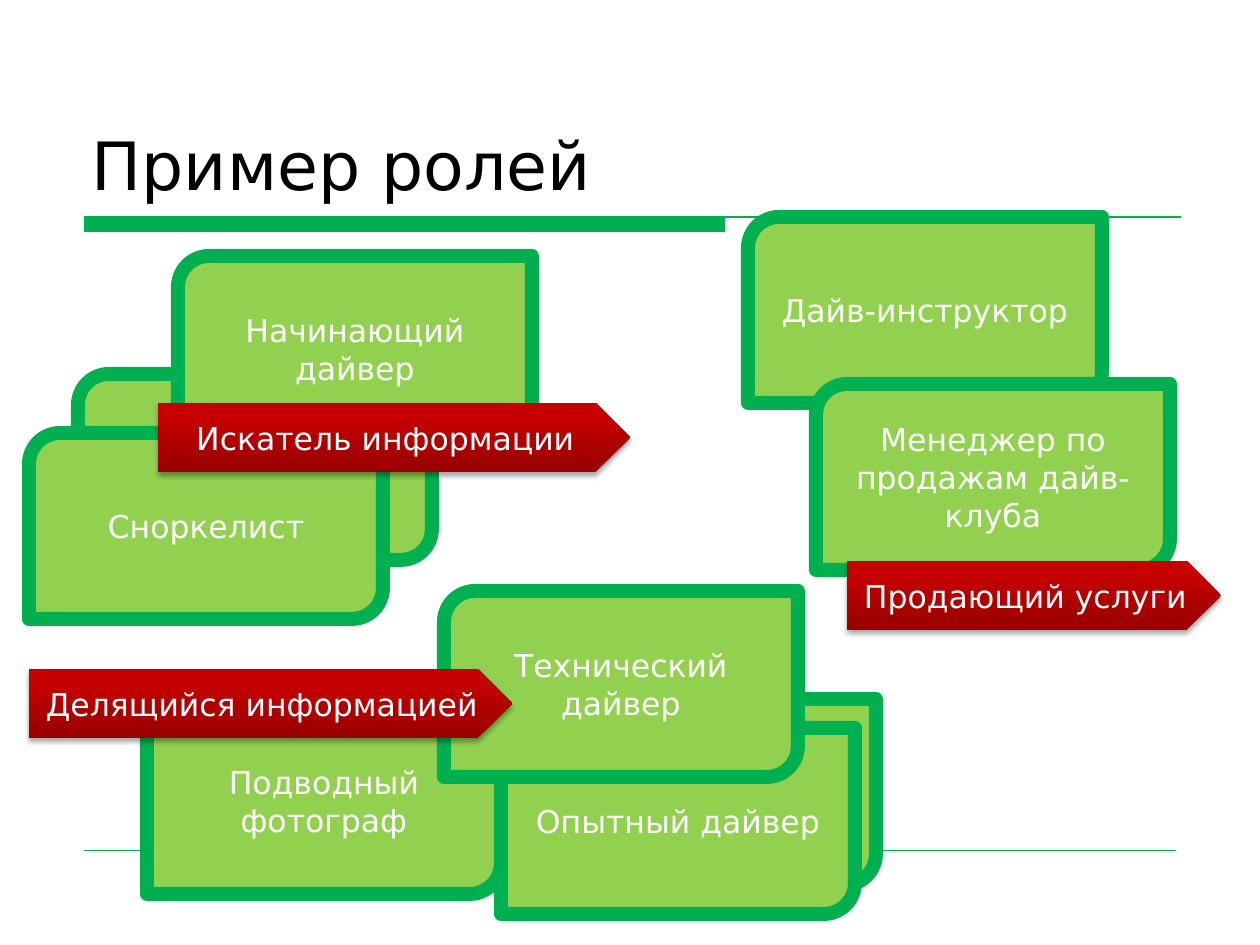
from dataclasses import dataclass

from lxml.etree import SubElement
from pptx import Presentation
from pptx.dml.color import RGBColor
from pptx.enum.shapes import MSO_CONNECTOR, MSO_SHAPE
from pptx.enum.text import MSO_ANCHOR, MSO_AUTO_SIZE, PP_ALIGN
from pptx.oxml import parse_xml
from pptx.oxml.ns import nsdecls, qn
from pptx.util import Emu, Pt

PX_PER_INCH = 126
CARD_SIZE = (354, 186)
ARROW_HEIGHT = 69


@dataclass(frozen=True)
class Theme:
    font: str = "DejaVu Sans"
    title_size: int = 38
    label_size: int = 18
    ink: str = "000000"
    white: str = "FFFFFF"
    green: str = "00B050"
    lime: str = "92D050"
    card_line: int = 8
    reds: tuple = ((0, "980000"), (80, "C60000"), (100, "C70000"))


THEME = Theme()

# Back to front: left, top, label
CARDS = [
    (78, 374, ""),
    (522, 699, ""),
    (29, 433, "Сноркелист"),
    (748, 217, "Дайв-инструктор"),
    (501, 728, "Опытный дайвер"),
    (147, 708, "Подводный фотограф"),
    (444, 591, "Технический дайвер"),
    (178, 256, "Начинающий дайвер"),
    (816, 384, "Менеджер по продажам дайв-клуба"),
]
# Left, top, width, label
ARROWS = [
    (158, 403, 472, "Искатель информации"),
    (29, 669, 483, "Делящийся информацией"),
    (847, 561, 374, "Продающий услуги"),
]


def px(*lengths):
    return [Emu(round(length * 914400 / PX_PER_INCH)) for length in lengths]


def rgb(color):
    return RGBColor.from_string(color)


def write(shape, text, size=THEME.label_size, color=THEME.white,
          align=PP_ALIGN.CENTER, anchor=MSO_ANCHOR.MIDDLE):
    frame = shape.text_frame
    frame.word_wrap = True
    frame.auto_size = MSO_AUTO_SIZE.NONE
    frame.vertical_anchor = anchor
    para = frame.paragraphs[0]
    para.alignment = align
    span = para.add_run()
    span.text = text
    span.font.name = THEME.font
    span.font.size = Pt(size)
    span.font.color.rgb = rgb(color)


def add_shape(page, kind, box, fill):
    shape = page.shapes.add_shape(kind, *px(*box))
    shape.shadow.inherit = False
    shape.fill.solid()
    shape.fill.fore_color.rgb = rgb(fill)
    shape.line.fill.background()
    return shape


def add_rule(page, left, top, width, weight):
    rule = page.shapes.add_connector(
        MSO_CONNECTOR.STRAIGHT, *px(left, top, left + width, top))
    rule.line.color.rgb = rgb(THEME.green)
    rule.line.width = Pt(weight)
    SubElement(rule._element.spPr, qn("a:effectLst"))


def add_header(page, box):
    left, top, width, height = box
    title = page.shapes.title
    title.left, title.top, title.width, title.height = px(*box)
    write(title, "Пример ролей", size=THEME.title_size, color=THEME.ink,
          align=PP_ALIGN.LEFT, anchor=MSO_ANCHOR.BOTTOM)
    # Thick bar under the title, continued by a thin rule
    rule_left, rule_top = left + 5, top + height + 7
    add_shape(page, MSO_SHAPE.RECTANGLE, (rule_left, rule_top, 641, 15), THEME.green)
    add_rule(page, rule_left, rule_top, width - 5, 0.75)


def add_card(page, box, label):
    card = add_shape(page, MSO_SHAPE.ROUND_2_DIAG_RECTANGLE, box, THEME.lime)
    card.line.color.rgb = rgb(THEME.green)
    card.line.width = Pt(THEME.card_line)
    if label:
        write(card, label)


def add_arrow(page, box, label):
    arrow = add_shape(page, MSO_SHAPE.PENTAGON, box, THEME.reds[0][1])
    properties = arrow._element.spPr
    # Red gradient running upwards
    stops = "".join(
        f'<a:gs pos="{position * 1000}"><a:srgbClr val="{color}"/></a:gs>'
        for position, color in THEME.reds)
    properties.replace(properties.find(qn("a:solidFill")), parse_xml(
        f'<a:gradFill {nsdecls("a")} rotWithShape="1"><a:gsLst>{stops}</a:gsLst>'
        '<a:lin ang="16200000" scaled="0"/></a:gradFill>'))
    # Soft shadow below
    properties.find(qn("a:effectLst")).append(parse_xml(
        f'<a:outerShdw {nsdecls("a")} blurRad="{Pt(3.1)}" dist="{Pt(1.8)}" '
        'dir="5400000" rotWithShape="0"><a:srgbClr val="000000">'
        '<a:alpha val="35000"/></a:srgbClr></a:outerShdw>'))
    write(arrow, label)


def build_roles(page):
    add_header(page, (79, 42, 1102, 168))
    add_rule(page, 84, 850, 1092, 0.25)
    for left, top, label in CARDS:
        add_card(page, (left, top, *CARD_SIZE), label)
    for left, top, width, label in ARROWS:
        add_arrow(page, (left, top, width, ARROW_HEIGHT), label)


def main():
    deck = Presentation()
    deck.slide_width, deck.slide_height = px(1260, 945)
    title_only = deck.slide_layouts[5]
    build_roles(deck.slides.add_slide(title_only))
    deck.save("out.pptx")


if __name__ == "__main__":
    main()
